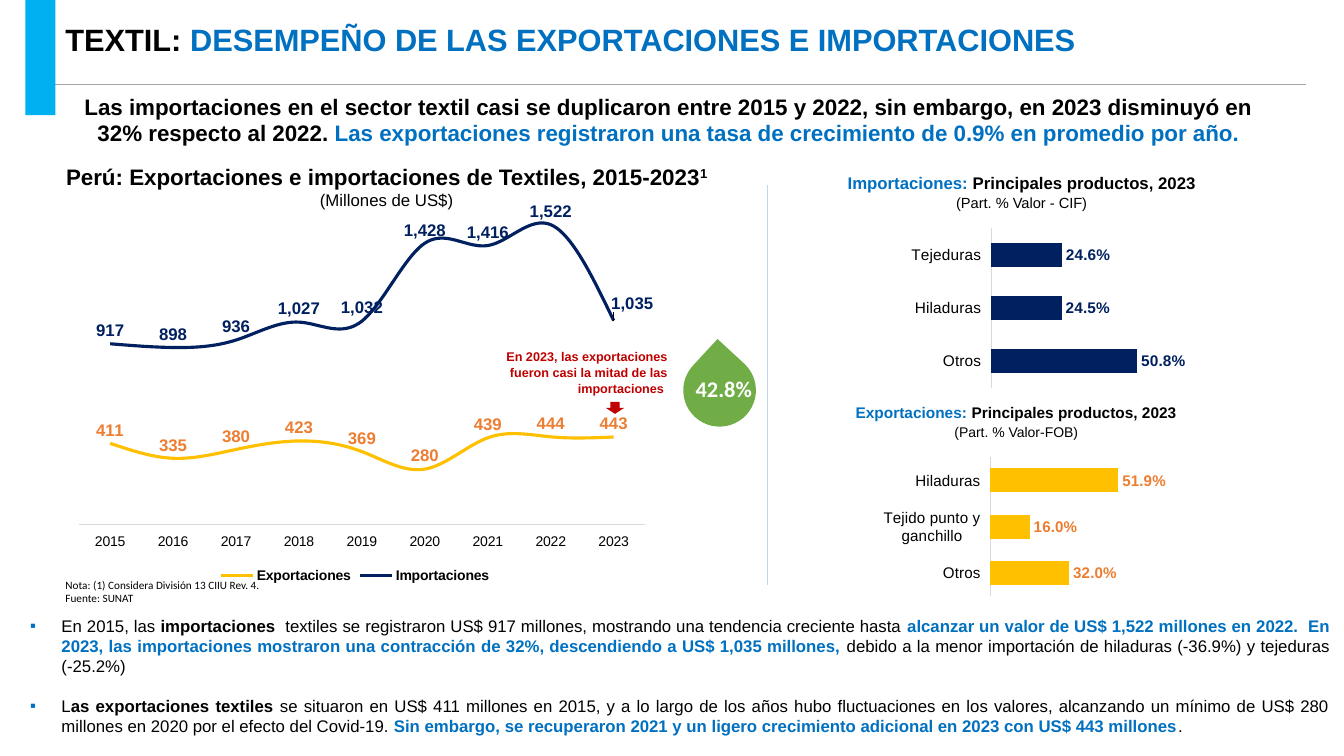
from lxml.etree import SubElement
from pptx import Presentation
from pptx.chart.data import CategoryChartData
from pptx.dml.color import RGBColor
from pptx.enum.chart import XL_CHART_TYPE, XL_LABEL_POSITION, XL_LEGEND_POSITION
from pptx.enum.chart import XL_TICK_LABEL_POSITION, XL_TICK_MARK
from pptx.enum.shapes import MSO_CONNECTOR, MSO_SHAPE
from pptx.enum.text import PP_ALIGN
from pptx.oxml import parse_xml
from pptx.oxml.ns import qn
from pptx.util import Cm, Pt

BLACK = RGBColor(0, 0, 0)
WHITE = RGBColor(255, 255, 255)
BLUE = RGBColor(0x00, 0x70, 0xC0)
SKY = RGBColor(0x00, 0xB0, 0xF0)
NAVY = RGBColor(0x00, 0x20, 0x60)
GOLD = RGBColor(0xFF, 0xC0, 0x00)
ORANGE = RGBColor(0xED, 0x7D, 0x31)
RED = RGBColor(0xC0, 0x00, 0x00)
GREEN = RGBColor(0x70, 0xAD, 0x47)
GRAY = RGBColor(0xA5, 0xA5, 0xA5)
PALE = RGBColor(0xBD, 0xD7, 0xEE)
AXIS = RGBColor(0xD9, 0xD9, 0xD9)
CHART_NS = "http://schemas.openxmlformats.org/drawingml/2006/chart"


def assign(item, **values):
    for name, value in values.items():
        setattr(item, name, value)


def style(font, size, color=BLACK, bold=False, name="Arial"):
    assign(font, size=Pt(size), bold=bold, name=name)
    font.color.rgb = color


def add_text(slide, box, paras, align=PP_ALIGN.LEFT, wrap=True, name="Arial", **spacing):
    """Each paragraph is a list of runs: (text, size, color, bold)."""
    frame = slide.shapes.add_textbox(*map(Cm, box)).text_frame
    frame.word_wrap = wrap
    for i, runs in enumerate(paras):
        para = frame.add_paragraph() if i else frame.paragraphs[0]
        assign(para, alignment=align, **spacing)
        for text, *look in runs:
            run = para.add_run()
            run.text = text
            style(run.font, *look, name=name)
    return frame


def add_bullet(para):
    props = para._p.get_or_add_pPr()
    props.set("marL", str(Cm(0.79)))
    props.set("indent", str(-Cm(0.79)))
    color = SubElement(props, qn("a:buClr"))
    SubElement(color, qn("a:srgbClr")).set("val", str(BLUE))
    SubElement(props, qn("a:buFont")).set("typeface", "Arial")
    SubElement(props, qn("a:buChar")).set("char", "▪")


def add_block(slide, kind, box, color, turn=0):
    shape = slide.shapes.add_shape(kind, *map(Cm, box))
    shape.fill.solid()
    shape.fill.fore_color.rgb = color
    shape.line.fill.background()
    shape.shadow.inherit = False
    shape.rotation = turn


def add_rule(slide, ends, color):
    rule = slide.shapes.add_connector(MSO_CONNECTOR.STRAIGHT, *map(Cm, ends))
    rule.line.color.rgb = color
    rule.line.width = Pt(0.5)
    SubElement(rule._element.spPr, qn("a:effectLst"))


def make_layout(**values):
    parts = "".join(f'<c:{key} val="{value}"/>' for key, value in values.items())
    return parse_xml(f'<c:layout xmlns:c="{CHART_NS}"><c:manualLayout>{parts}'
                     '</c:manualLayout></c:layout>')


def add_chart(slide, kind, box, cats, series, form, plot, top):
    """Add a chart with a fixed inner plot area and a value axis from 0 to top."""
    data = CategoryChartData(number_format=form)
    data.categories = cats
    for name, values in series:
        data.add_series(name, values)
    chart = slide.shapes.add_chart(kind, *map(Cm, box), data).chart
    assign(chart, has_title=False, has_legend=False)
    style(chart.font, 10)
    area = chart._chartSpace.chart.plotArea
    for old in area.findall(qn("c:layout")):
        area.remove(old)
    x, y, w, h = plot
    area.insert(0, make_layout(layoutTarget="inner", xMode="edge", yMode="edge",
                               x=x, y=y, w=w, h=h))
    assign(chart.value_axis, minimum_scale=0, maximum_scale=top,
           has_major_gridlines=False, major_tick_mark=XL_TICK_MARK.NONE)
    assign(chart.category_axis, has_major_gridlines=False,
           major_tick_mark=XL_TICK_MARK.NONE,
           tick_label_position=XL_TICK_LABEL_POSITION.LOW)
    line = chart.category_axis.format.line
    line.color.rgb = AXIS
    line.width = Pt(0.75)
    chart.plots[0].vary_by_categories = False
    return chart


def add_labels(series, size, color, form, place):
    labels = series.data_labels
    assign(labels, show_value=True, number_format=form,
           number_format_is_linked=False, position=place)
    style(labels.font, size, color, True)


def add_trend(slide):
    form = "#,##0"
    series = [("Exportaciones", (411, 335, 380, 423, 369, 280, 439, 444, 443)),
              ("Importaciones", (917, 898, 936, 1027, 1032, 1428, 1416, 1522, 1035))]
    chart = add_chart(slide, XL_CHART_TYPE.LINE, (1.14, 4.7, 15.62, 10.11),
                      [str(year) for year in range(2015, 2024)], series, form,
                      (0.054, 0.057, 0.914, 0.785), 1600)
    chart.value_axis.visible = False
    style(chart.category_axis.tick_labels.font, 10)
    chart.has_legend = True
    assign(chart.legend, position=XL_LEGEND_POSITION.BOTTOM, include_in_layout=False)
    style(chart.legend.font, 10, bold=True)
    for line, color, ink in zip(chart.series, (GOLD, NAVY), (ORANGE, NAVY)):
        line.smooth = True
        line.format.line.color.rgb = color
        line.format.line.width = Pt(2.25)
        add_labels(line, 12, ink, form, XL_LABEL_POSITION.ABOVE)
    last = chart.series[1].points[8].data_label
    style(last.font, 12, NAVY, True)
    last.position = XL_LABEL_POSITION.ABOVE
    label = chart.series[1]._element.find(".//" + qn("c:dLbl"))
    label.insert(1, make_layout(x=0.03, y=-0.01))


def add_bars(slide, box, cats, values, color, ink, gap, plot):
    form = "0.0%"
    chart = add_chart(slide, XL_CHART_TYPE.BAR_CLUSTERED, box, cats,
                      [("Series 1", values)], form, plot, 0.6)
    chart.category_axis.reverse_order = True
    style(chart.category_axis.tick_labels.font, 11)
    chart.value_axis.tick_label_position = XL_TICK_LABEL_POSITION.NONE
    chart.value_axis.format.line.fill.background()
    chart.plots[0].gap_width = gap
    bars = chart.series[0]
    bars.format.fill.solid()
    bars.format.fill.fore_color.rgb = color
    add_labels(bars, 11, ink, form, XL_LABEL_POSITION.OUTSIDE_END)


def add_heading(slide, box, topic, note, size, small):
    add_text(slide, box, [
        [(topic, size, BLUE, True), ("Principales productos, 2023", size, BLACK, True)],
        [(note, small)]], PP_ALIGN.CENTER, line_spacing=1.07)


def add_notes(slide):
    frame = add_text(slide, (0.51, 15.39, 33.27, 3.33), [
        [("En 2015, las ", 12), ("importaciones", 12, BLACK, True),
         ("  textiles se registraron US$ 917 millones, mostrando una tendencia "
          "creciente hasta ", 12),
         ("alcanzar un valor de US$ 1,522 millones en 2022.  En 2023, las importaciones "
          "mostraron una contracción de 32%, descendiendo a US$ 1,035 millones, ",
          12, BLUE, True),
         ("debido a la menor importación de hiladuras (-36.9%) y tejeduras (-25.2%)", 12)],
        [("L", 12), ("as exportaciones textiles ", 12, BLACK, True),
         ("se situaron en US$ 411 millones en 2015, y a lo largo de los años hubo "
          "fluctuaciones en los valores, alcanzando un mínimo de US$ 280 millones en 2020 "
          "por el efecto del Covid-19. ", 12),
         ("Sin embargo, se recuperaron 2021 y un ligero crecimiento adicional en 2023 "
          "con US$ 443 millones", 12, BLUE, True), (".", 12)],
    ], PP_ALIGN.JUSTIFY)
    frame.paragraphs[0].space_after = Pt(14)
    for para in frame.paragraphs:
        add_bullet(para)


def main():
    deck = Presentation()
    assign(deck, slide_width=Cm(33.87), slide_height=Cm(19.05))
    slide = deck.slides.add_slide(deck.slide_layouts[6])
    add_trend(slide)
    add_text(slide, (1.4, 0.41, 31.52, 1.27), [
        [("TEXTIL: ", 22, BLACK, True),
         ("DESEMPEÑO DE LAS EXPORTACIONES E IMPORTACIONES", 22, BLUE, True)]])
    add_rule(slide, (0.81, 2.13, 32.92, 2.13), GRAY)
    add_block(slide, MSO_SHAPE.RECTANGLE, (0.64, 0, 0.76, 2.9), SKY)
    title = add_text(slide, (1.12, 3.99, 17.25, 1.45), [
        [("Perú: Exportaciones e importaciones de Textiles, 2015-2023", 16, BLACK, True),
         ("1", 16, BLACK, True)],
        [("(Millones de US$)", 12)]], PP_ALIGN.CENTER)
    title.paragraphs[0].runs[1]._r.get_or_add_rPr().set("baseline", "30000")
    add_text(slide, (1.4, 14.45, 5.51, 0.94), [
        [("Nota: (1) Considera División 13 CIIU Rev. 4.", 8)],
        [("Fuente: SUNAT", 8)]], wrap=False, name="Calibri")
    add_notes(slide)
    add_text(slide, (1.65, 2.21, 30.4, 1.63), [
        [("Las importaciones en el sector textil casi se duplicaron entre 2015 y 2022, sin "
          "embargo, en 2023 disminuyó en 32% respecto al 2022. ", 16, BLACK, True),
         ("Las exportaciones registraron una tasa de crecimiento de 0.9% en promedio por "
          "año.", 16, BLUE, True)]], PP_ALIGN.CENTER)
    add_text(slide, (11.84, 8.64, 5.23, 1.5), [
        [("En 2023, las exportaciones fueron casi la mitad de las importaciones ",
          9, RED, True)]], PP_ALIGN.RIGHT, line_spacing=1.07)
    add_heading(slide, (20.35, 4.19, 10.8, 1.3), "Importaciones: ",
                "(Part. % Valor - CIF)", 12, 10.5)
    add_heading(slide, (21.29, 10.01, 8.64, 1.22), "Exportaciones: ",
                "(Part. % Valor-FOB)", 11, 10)
    add_rule(slide, (19.33, 4.65, 19.33, 14.73), PALE)
    add_block(slide, MSO_SHAPE.DOWN_ARROW, (15.27, 10.13, 0.46, 0.3), RED)
    add_bars(slide, (21.41, 11.18, 7.98, 4.19),
             ("Hiladuras", "Tejido punto y ganchillo", "Otros"), (0.519, 0.16, 0.32),
             GOLD, ORANGE, 96, (0.453, 0.081, 0.476, 0.838))
    add_bars(slide, (21.95, 5.36, 7.98, 4.8),
             ("Tejeduras", "Hiladuras", "Otros"), (0.246, 0.245, 0.508),
             NAVY, NAVY, 125, (0.38, 0.081, 0.544, 0.838))
    add_block(slide, MSO_SHAPE.TEAR, (17.22, 8.92, 1.83, 1.83), GREEN, 312.7)
    add_text(slide, (17.25, 9.32, 1.98, 0.94), [[("42.8%", 16, WHITE, True)]],
             PP_ALIGN.CENTER, wrap=False, name="Calibri")
    deck.save("out.pptx")


if __name__ == "__main__":
    main()
